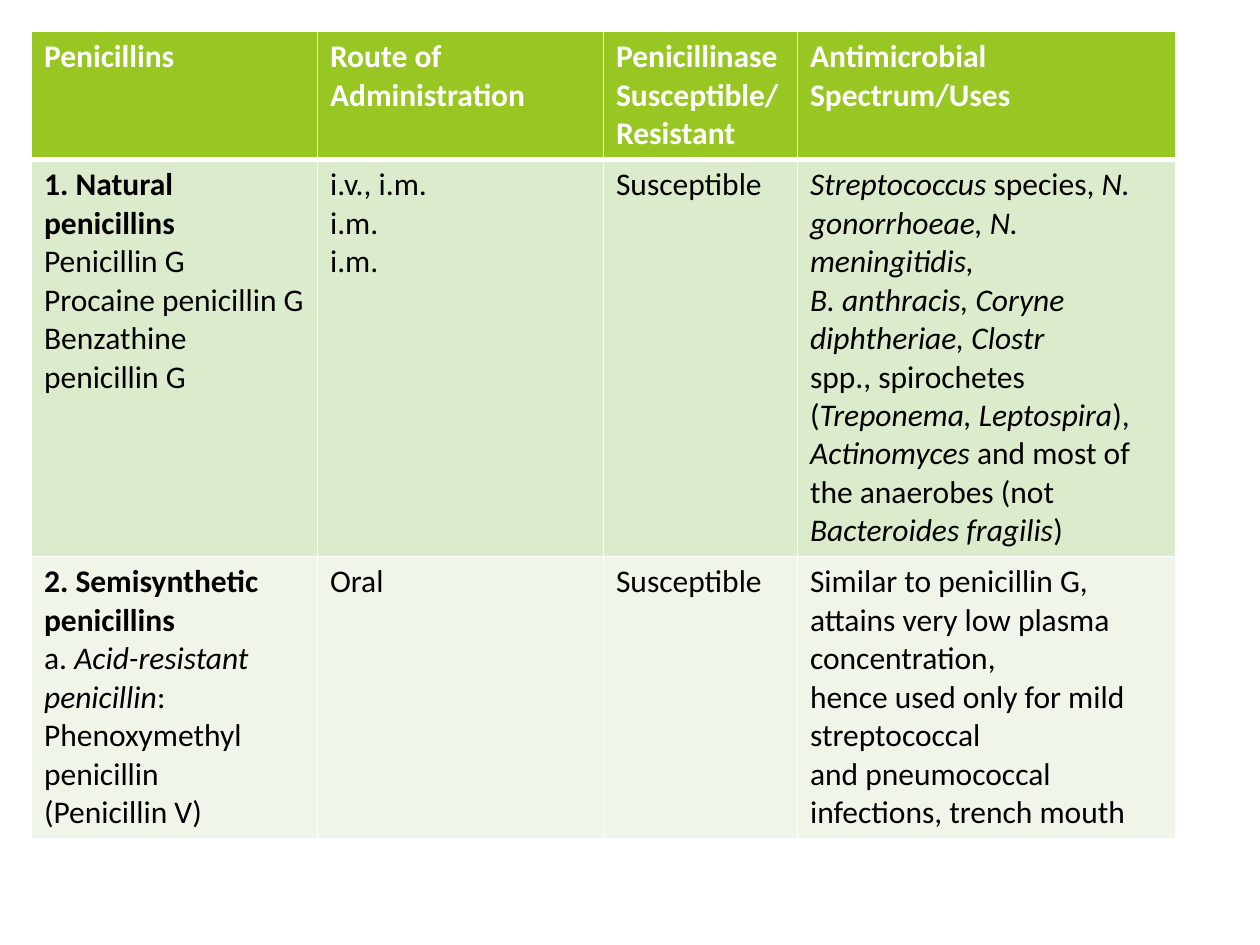
from dataclasses import dataclass

import pptx
import pptx.dml.color
import pptx.oxml
import pptx.oxml.ns
import pptx.util
from pptx.util import Inches


@dataclass(frozen=True)
class Theme:
    font: str = "Calibri"
    size: int = 18
    header_text: str = "FFFFFF"
    body_text: str = "000000"
    border: str = "FFFFFF"
    row_fills: tuple = ("98C723", "DDEBCD", "EFF5E8")
    thin: int = 1
    thick: int = 3


THEME = Theme()
COLUMN_WIDTHS = (2.27, 2.27, 1.54, 3.0)
ROW_HEIGHTS = (1.0, 3.1, 2.2)

# Each cell is a list of paragraphs; text between underscores is italic.
ROWS = [
    [
        ["Penicillins"],
        ["Route of", "Administration"],
        ["Penicillinase", "Susceptible/", "Resistant"],
        ["Antimicrobial", "Spectrum/Uses"],
    ],
    [
        ["1. Natural penicillins", "Penicillin G", "Procaine penicillin G",
         "Benzathine penicillin G"],
        ["i.v., i.m.", "i.m.", "i.m."],
        ["Susceptible"],
        ["_Streptococcus _species, _N. gonorrhoeae, N. meningitidis,_",
         "_B. anthracis, Coryne diphtheriae, Clostr_",
         "spp., spirochetes (_Treponema, Leptospira_), _Actinomyces _"
         "and most of the anaerobes (not _Bacteroides fragilis_)"],
    ],
    [
        ["2. Semisynthetic penicillins", "a. _Acid-resistant_", "_penicillin_:",
         "Phenoxymethyl", "penicillin", "(Penicillin V)"],
        ["Oral"],
        ["Susceptible"],
        ["Similar to penicillin G, attains very low plasma concentration,",
         "hence used only for mild streptococcal",
         "and pneumococcal infections, trench mouth"],
    ],
]


def rgb(value):
    return pptx.dml.color.RGBColor.from_string(value)


def set_borders(cell, widths):
    """Draw cell edges; widths maps an edge letter (L, R, T, B) to points."""
    properties = cell._tc.get_or_add_tcPr()
    for position, (edge, width) in enumerate(widths.items()):
        line = pptx.oxml.parse_xml(
            f'<a:ln{edge} {pptx.oxml.ns.nsdecls("a")} w="{pptx.util.Pt(width)}">'
            f'<a:solidFill><a:srgbClr val="{THEME.border}"/></a:solidFill>'
            f'</a:ln{edge}>')
        properties.insert(position, line)


def write_paragraph(para, text, color, bold):
    for index, part in enumerate(text.split("_")):
        if not part:
            continue
        span = para.add_run()
        span.text = part
        formats = {
            "name": THEME.font,
            "size": pptx.util.Pt(THEME.size),
            "bold": bold,
            "italic": index % 2 == 1,
        }
        for name, value in formats.items():
            setattr(span.font, name, value)
        span.font.color.rgb = rgb(color)


def fill_cell(cell, lines, row, column):
    header = row == 0
    cell.fill.solid()
    cell.fill.fore_color.rgb = rgb(THEME.row_fills[row])
    set_borders(cell, {
        "L": THEME.thin,
        "R": THEME.thin,
        "T": THEME.thick if row == 1 else THEME.thin,
        "B": THEME.thick if header else THEME.thin,
    })
    frame = cell.text_frame
    for index, text in enumerate(lines):
        para = frame.add_paragraph() if index else frame.paragraphs[0]
        group_title = column == 0 and index == 0
        write_paragraph(para, text,
                        THEME.header_text if header else THEME.body_text,
                        header or group_title)


def add_penicillin_table(page, left, top, width, height):
    """Place the table, sharing the box out by column and row proportions."""
    table = page.shapes.add_table(
        len(ROWS), len(COLUMN_WIDTHS), left, top, width, height).table
    for column, share in zip(table.columns, COLUMN_WIDTHS):
        column.width = int(width * share / sum(COLUMN_WIDTHS))
    for row, share in zip(table.rows, ROW_HEIGHTS):
        row.height = int(height * share / sum(ROW_HEIGHTS))
    for row, cells in enumerate(ROWS):
        for column, lines in enumerate(cells):
            fill_cell(table.cell(row, column), lines, row, column)


def main():
    deck = pptx.Presentation()
    deck.slide_width, deck.slide_height = Inches(10), Inches(7.5)
    page = deck.slides.add_slide(deck.slide_layouts[6])
    add_penicillin_table(page, Inches(0.25), Inches(0.25),
                         Inches(9.08), Inches(6.3))
    deck.save("out.pptx")


if __name__ == "__main__":
    main()
